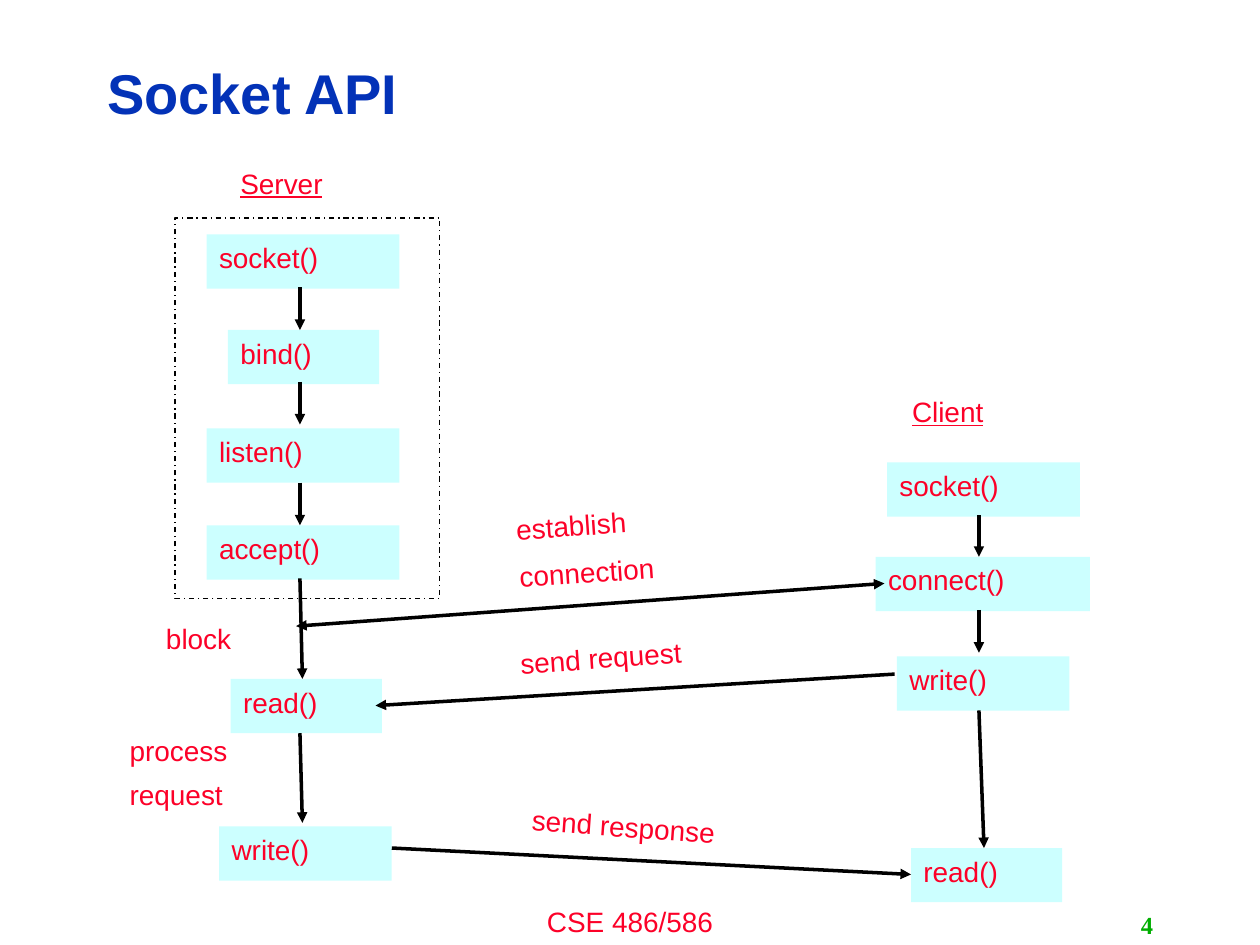
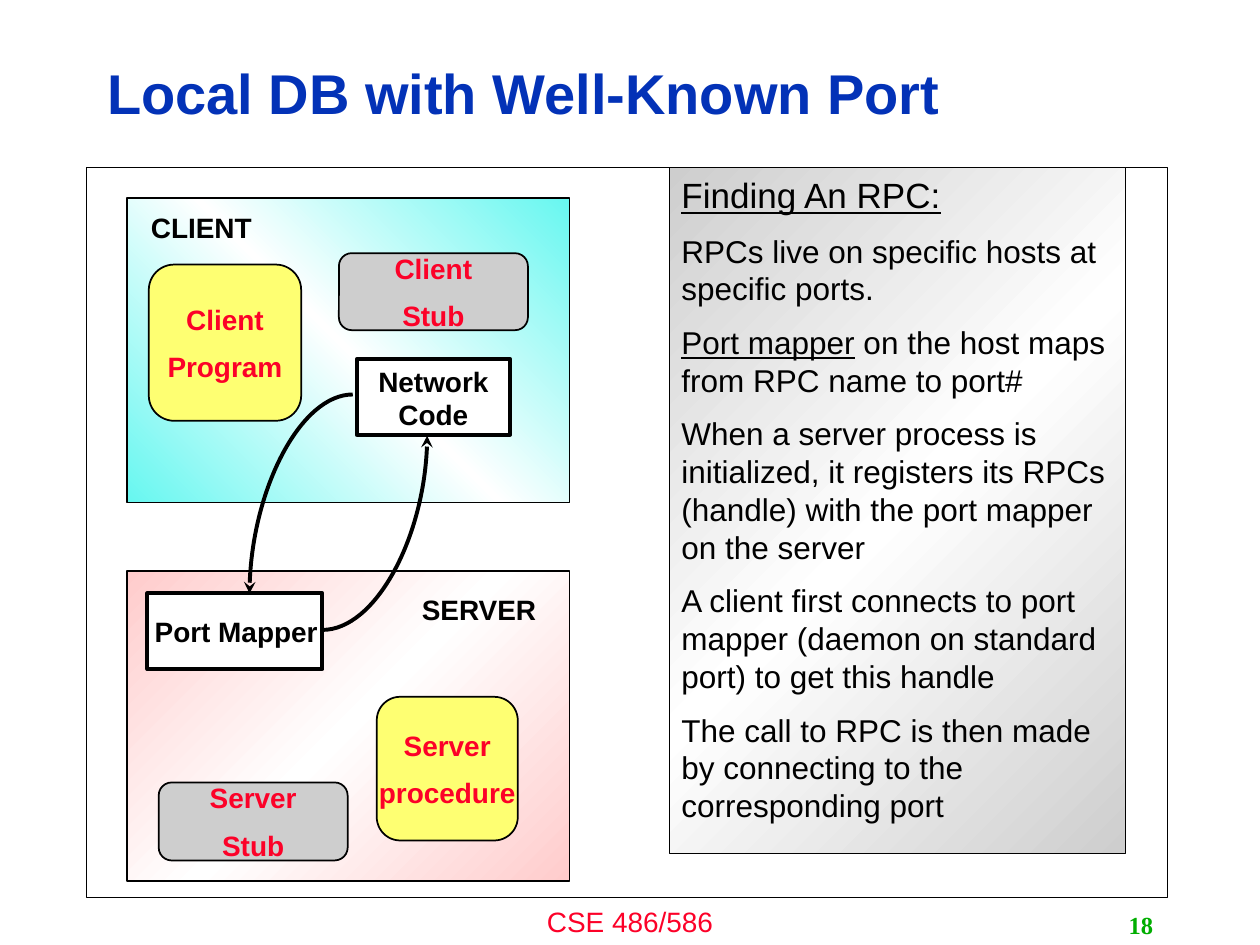
from copy import deepcopy
from dataclasses import dataclass

from pptx import Presentation
from pptx.dml.color import RGBColor
from pptx.enum.dml import MSO_LINE
from pptx.enum.shapes import MSO_CONNECTOR as CONN, MSO_SHAPE as SHAPE
from pptx.enum.text import MSO_ANCHOR as ANCHOR, MSO_AUTO_SIZE as AUTO, PP_ALIGN as ALIGN
from pptx.oxml.ns import qn
from pptx.util import Pt
from lxml.etree import SubElement

COLORS = {
    "title": "0332B7", "text": "FC0128", "number": "00AE00", "ink": "000000",
    "white": "FFFFFF", "call": "CCFFFF", "program": "FEFF72", "stub": "CECECE",
    "client": "67F7F0", "server": "FFCCCC",
}
CALL_HEIGHT = 31


@dataclass(frozen=True)
class Area:
    left: float
    top: float
    width: float
    height: float = CALL_HEIGHT

    def lengths(self) -> tuple:
        return Pt(self.left), Pt(self.top), Pt(self.width), Pt(self.height)


@dataclass(frozen=True)
class Style:
    size: float = 16
    color: str = "text"
    font: str = "Arial"
    bold: bool = False
    underline: bool = False
    align: ALIGN = ALIGN.LEFT
    anchor: ANCHOR = ANCHOR.TOP
    line_spacing: float | None = None
    wrap: bool = True


@dataclass(frozen=True)
class Label:
    text: str
    area: Area
    style: Style = Style()
    rotation: float = 0


@dataclass(frozen=True)
class Arrow:
    x1: float
    y1: float
    x2: float
    y2: float
    both: bool = False


@dataclass(frozen=True)
class Panel:
    area: Area
    fill: str | None = None
    line: float = 1
    angle: float | None = None
    shape: SHAPE = SHAPE.RECTANGLE
    text: str = ""
    dash: MSO_LINE | None = None


PLAIN = Style()
HEADING = Style(underline=True)
TIGHT = Style(line_spacing=0.9)
TITLE = Style(32, "title", bold=True, anchor=ANCHOR.MIDDLE, line_spacing=0.9)
FOOTER = Style(align=ALIGN.CENTER)
NUMBER = Style(14, "number", "Times New Roman", bold=True, align=ALIGN.RIGHT,
               anchor=ANCHOR.MIDDLE)
MODULE = Style(bold=True, align=ALIGN.CENTER, anchor=ANCHOR.MIDDLE, wrap=False)
ROLE = Style(color="ink", bold=True)
NODE = Style(color="ink", bold=True, align=ALIGN.CENTER)
NOTE = Style(18, "ink")
NOTE_HEADING = Style(20, "ink", underline=True)

TITLE_AREA = Area(54, 26, 574.5, 58)
FOOTER_LABEL = Label("CSE 486/586", Area(240, 513.4, 240, 26.6), FOOTER)
NUMBER_AREA = Area(516.2, 517, 149.8, 23)

CALLS = [
    ("socket()", Area(118.1, 133.9, 110.2)),
    ("bind()", Area(130.3, 188.6, 86.4)),
    ("listen()", Area(118.1, 244.8, 110.2)),
    ("accept()", Area(118.1, 300.2, 110.2)),
    ("read()", Area(131.8, 388, 86.4)),
    ("write()", Area(125.3, 472.3, 98.6)),
    ("socket()", Area(506.9, 264.2, 110.2)),
    ("connect()", Area(500.4, 318.2, 122.4)),
    ("write()", Area(512.6, 375.1, 98.6)),
    ("read()", Area(520.6, 484.6, 86.4)),
]
FLOW_LABELS = [
    Label("Server", Area(130.3, 91.4, 86.4), HEADING),
    Label("Client", Area(514.1, 221.8, 86.4), HEADING),
    Label("block", Area(87.8, 351.4, 74.2)),
    Label("process\nrequest", Area(67, 417.6, 98.6, 50.4), TIGHT),
    Label("establish\nconnection", Area(288.7, 285.1, 134.6, 55.4), rotation=356),
    Label("send request", Area(290.2, 360.7, 158.4), rotation=356),
    Label("send response", Area(296.6, 460.8, 170.6), rotation=4.1),
]
FLOW_ARROWS = [
    Arrow(171.4, 164.2, 171.4, 188.6),
    Arrow(171.4, 218.2, 171.4, 242.6),
    Arrow(171.4, 275.8, 171.4, 300.2),
    Arrow(171.4, 330.5, 172.8, 388),
    Arrow(171.4, 419, 172.8, 470.2),
    Arrow(559.4, 294.5, 559.4, 318.2),
    Arrow(559.4, 348.5, 559.4, 373),
    Arrow(559.4, 406, 562.3, 484.6),
    Arrow(505.4, 333.4, 169.2, 357.8, both=True),
    Arrow(511.2, 385.2, 214.6, 403.2),
    Arrow(223.9, 484.6, 520.6, 499.7),
]
SERVER_SETUP = Panel(Area(100.1, 124.6, 151.2, 217.4), line=0.75, dash=MSO_LINE.DASH_DOT)

ROUND = SHAPE.ROUNDED_RECTANGLE
RPC_PANELS = [
    Panel(Area(72.7, 326.2, 252.7, 177.1), "server", angle=315),
    Panel(Area(72.7, 113, 252.7, 174.2), "client", angle=45),
    Panel(Area(49, 95.8, 617.8, 416.9), line=0.25),
    Panel(Area(85, 151.2, 87.1, 89.3), "program", shape=ROUND, text="Client\nProgram"),
    Panel(Area(215.3, 398.2, 80.6, 82.1), "program", shape=ROUND, text="Server\nprocedure"),
    Panel(Area(90.7, 447.1, 108, 44.6), "stub", shape=ROUND, text="Server\nStub"),
    Panel(Area(193.7, 144.7, 108, 44), "stub", shape=ROUND, text="Client\nStub"),
    Panel(Area(203.8, 205.2, 87.8, 43.2), "white", 2.25),
    Panel(Area(84.2, 339.1, 100.1, 43.2), "white", 2.25),
]
RPC_LABELS = [
    Label("Network Code", Area(198.7, 204.5, 97.9, 46), NODE),
    Label("Port Mapper", Area(78.5, 347.8, 113, 26.6), NODE),
    Label("SERVER", Area(234, 334.8, 89.3, 24.5), ROLE),
    Label("CLIENT", Area(79.2, 116.6, 89.3, 24.5), ROLE),
]
RPC_ARROWS = [
    Arrow(201.6, 225.4, 142.6, 339.1),
    Arrow(184.3, 360, 244.1, 249.1),
]
NOTES_PANEL = Panel(Area(382.3, 95.8, 260.6, 391.7), "stub", 0.5, angle=315)
NOTES_HEADING = "Finding An RPC:"
NOTES = [
    ("", "RPCs live on specific hosts at specific ports."),
    ("Port mapper", " on the host maps from RPC name to port#"),
    ("", "When a server process is initialized, it registers its RPCs (handle) "
         "with the port mapper on the server"),
    ("", "A client first connects to port mapper (daemon on standard port) "
         "to get this handle"),
    ("", "The call to RPC is then made by connecting to the corresponding port"),
]


def rgb(name: str) -> RGBColor:
    return RGBColor.from_string(COLORS[name])


def format_paragraph(p, style: Style, first: bool) -> None:
    p.alignment = style.align
    p.space_before = Pt(0 if first else style.size / 2)
    if style.line_spacing:
        p.line_spacing = style.line_spacing
    f = p.font
    f.name, f.size, f.bold = style.font, Pt(style.size), style.bold
    f.color.rgb = rgb(style.color)
    if style.underline:
        f.underline = True


def write(tf, text: str, style: Style) -> None:
    tf.auto_size = AUTO.NONE
    tf.word_wrap = style.wrap
    tf.vertical_anchor = style.anchor
    for i, line in enumerate(text.split("\n")):
        p = tf.add_paragraph() if i else tf.paragraphs[0]
        p.add_run().text = line
        format_paragraph(p, style, i == 0)


def add_label(slide, label: Label) -> None:
    sp = slide.shapes.add_textbox(*label.area.lengths())
    sp.rotation = label.rotation
    write(sp.text_frame, label.text, label.style)


def fill_gradient(sp, color: str, angle: float) -> None:
    sp.fill.gradient()
    sp.fill.gradient_angle = angle
    stops = sp.element.spPr.find(".//" + qn("a:gsLst"))
    stops.append(deepcopy(stops[0]))
    for i, (stop, name) in enumerate(zip(sp.fill.gradient_stops, (color, "white", color))):
        stop.position = i / 2
        stop.color.rgb = rgb(name)


def add_panel(slide, panel: Panel, style: Style = MODULE):
    sp = slide.shapes.add_shape(panel.shape, *panel.area.lengths())
    sp.shadow.inherit = False
    if panel.fill is None:
        sp.fill.background()
    elif panel.angle is not None:
        fill_gradient(sp, panel.fill, panel.angle)
    else:
        sp.fill.solid()
        sp.fill.fore_color.rgb = rgb(panel.fill)
    if panel.line:
        sp.line.color.rgb = rgb("ink")
        sp.line.width = Pt(panel.line)
        if panel.dash:
            sp.line.dash_style = panel.dash
    else:
        sp.line.fill.background()
    if panel.text:
        write(sp.text_frame, panel.text, style)
    return sp


def add_arrow(slide, arrow: Arrow, curved: bool = False) -> None:
    ends = (Pt(v) for v in (arrow.x1, arrow.y1, arrow.x2, arrow.y2))
    cx = slide.shapes.add_connector(CONN.CURVE if curved else CONN.STRAIGHT, *ends)
    cx.line.color.rgb = rgb("ink")
    cx.line.width = Pt(2.25 if curved else 2)
    sp_pr = cx.element.spPr
    if curved:
        sp_pr.find(qn("a:prstGeom")).set("prst", "curvedConnector2")
    ln = sp_pr.find(qn("a:ln"))
    for tag in ("a:headEnd", "a:tailEnd") if arrow.both else ("a:tailEnd",):
        SubElement(ln, qn(tag), type="stealth" if curved else "triangle")
    SubElement(sp_pr, qn("a:effectLst"))


def add_slide(prs, title: str, number: int):
    slide = prs.slides.add_slide(prs.slide_layouts.get_by_name("Title Only"))
    sp = slide.shapes.title
    sp.left, sp.top, sp.width, sp.height = TITLE_AREA.lengths()
    write(sp.text_frame, title, TITLE)
    add_label(slide, FOOTER_LABEL)
    add_label(slide, Label(str(number), NUMBER_AREA, NUMBER))
    return slide


def add_notes_panel(slide) -> None:
    tf = add_panel(slide, NOTES_PANEL).text_frame
    write(tf, NOTES_HEADING, NOTE_HEADING)
    for term, text in NOTES:
        p = tf.add_paragraph()
        if term:
            r = p.add_run()
            r.text = term
            r.font.underline = True
        p.add_run().text = text
        format_paragraph(p, NOTE, False)


def build_socket_slide(prs) -> None:
    slide = add_slide(prs, "Socket API", 4)
    for name, area in CALLS:
        add_panel(slide, Panel(area, "call", line=0, text=name), PLAIN)
    add_panel(slide, SERVER_SETUP)
    for label in FLOW_LABELS:
        add_label(slide, label)
    for arrow in FLOW_ARROWS:
        add_arrow(slide, arrow)


def build_port_slide(prs) -> None:
    slide = add_slide(prs, "Local DB with Well-Known Port", 18)
    for panel in RPC_PANELS:
        add_panel(slide, panel)
    for label in RPC_LABELS:
        add_label(slide, label)
    for arrow in RPC_ARROWS:
        add_arrow(slide, arrow, curved=True)
    add_notes_panel(slide)


def main() -> None:
    prs = Presentation()
    prs.slide_width, prs.slide_height = Pt(720), Pt(540)
    build_socket_slide(prs)
    build_port_slide(prs)
    prs.save("out.pptx")


if __name__ == "__main__":
    main()
